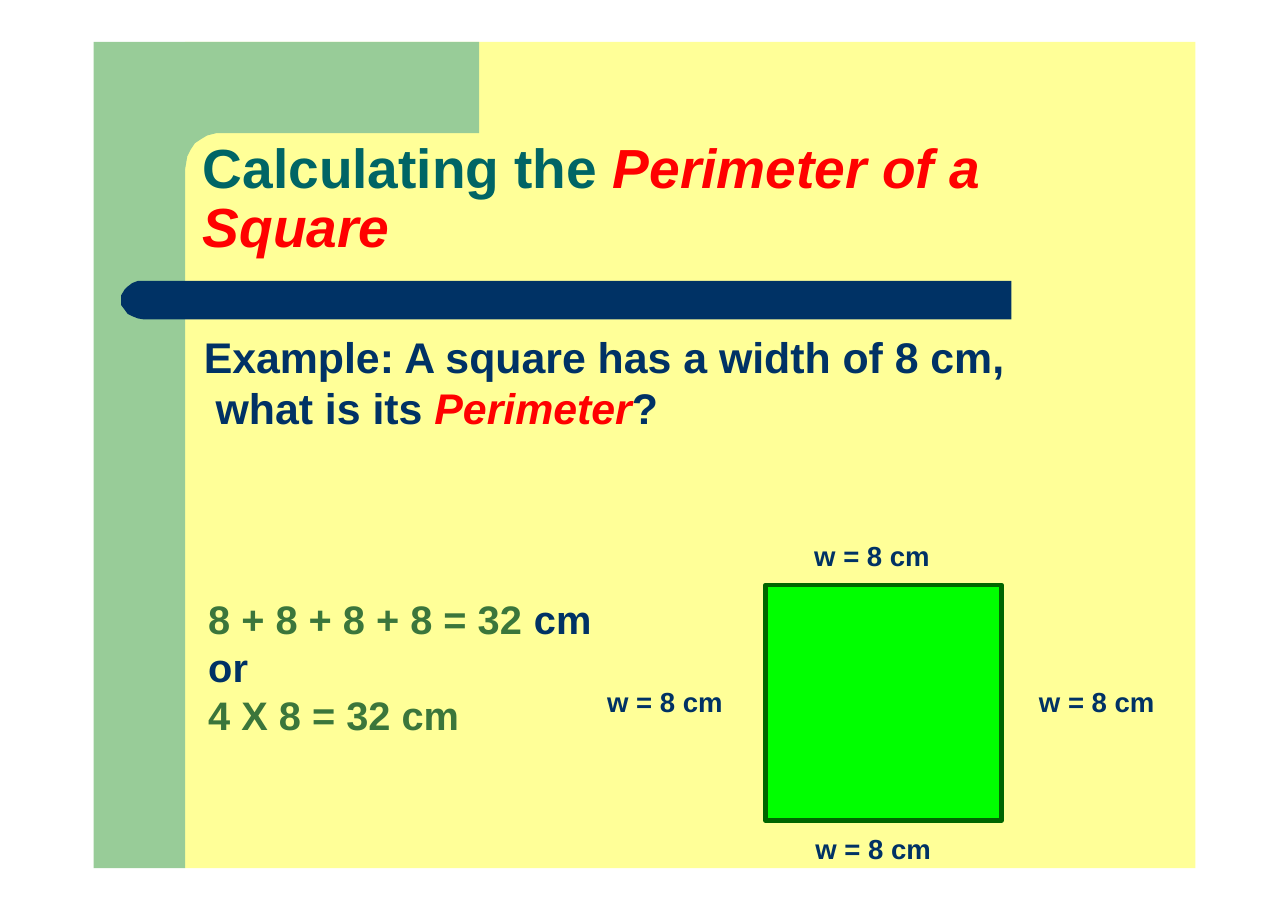
from pptx import Presentation
from pptx.dml.color import RGBColor
from pptx.enum import shapes, text
from pptx.util import Inches, Pt

COLORS = {
    "cream": "FFFF98", "sage": "98CC98", "navy": "003265", "teal": "006565",
    "red": "FF0000", "lime": "00FF00", "edge": "006500", "moss": "3B763B",
}
FONT = "Arial"
BREAK = None

TITLE = [[("Calculating the ", "teal", False), ("Perimeter of a Square", "red", True)]]
EXAMPLE = [[
    ("Example: A square has a width of 8 cm,", "navy", False),
    BREAK,
    (" what is its ", "navy", False),
    ("Perimeter", "red", True),
    ("?", "navy", False),
]]
ANSWER = [
    [("8 + 8 + 8 + 8 = 32 ", "moss", False), ("cm", "navy", False)],
    [("or", "navy", False)],
    [("4 X 8 = 32 cm", "moss", False)],
]
SIDE = [[("w = 8 cm", "navy", False)]]

TEXTS = [
    (TITLE, (1.84, 1.19, 8.02, 1.17), 36, 0.08, 5.8, 38.9),
    (EXAMPLE, (1.85, 2.99, 7.5, 0.96), 28, 0.01, 0.8, None),
    (ANSWER, (1.89, 5.39, 3.7, 1.33), 26, 0.01, 1, None),
]
SIDE_SPOTS = [(7.39, 4.88), (7.4, 7.54), (9.43, 6.21), (5.51, 6.21)]

PANEL = (1.68, 0.38, 9.17, 7.5)
SQUARE = (6.95, 5.31, 2.14, 2.14)
BAND = [
    (4.35, 0.38), (0.85, 0.38), (0.85, 7.88), (1.68, 7.88), (1.68, 1.54),
    (1.69, 1.48), (1.7, 1.42), (1.73, 1.36), (1.77, 1.3), (1.83, 1.26),
    (1.88, 1.23), (1.96, 1.21), (4.35, 1.21),
]
BAR_RIGHT, BAR_TOP, BAR_BOTTOM = 9.18, 2.55, 2.9
BAR_CAP = [
    (1.31, 2.55), (1.25, 2.55), (1.2, 2.57), (1.16, 2.6), (1.13, 2.63),
    (1.1, 2.68), (1.1, 2.77), (1.13, 2.81), (1.16, 2.85), (1.2, 2.87),
    (1.25, 2.89), (1.31, 2.9),
]
BAR = [(BAR_RIGHT, BAR_TOP), *BAR_CAP, (BAR_RIGHT, BAR_BOTTOM)]


def rgb(name):
    return RGBColor.from_string(COLORS[name])


def paint(sp, fill, edge=None):
    sp.shadow.inherit = False
    sp.fill.solid()
    sp.fill.fore_color.rgb = rgb(fill)
    if edge:
        sp.line.color.rgb = rgb(edge)
        sp.line.width = Pt(3)
    else:
        sp.line.fill.background()


def add_rectangle(s, box, fill, edge=None):
    sp = s.shapes.add_shape(shapes.MSO_SHAPE.RECTANGLE, *map(Inches, box))
    paint(sp, fill, edge)


def add_outline(s, points, fill):
    start, *rest = [(Inches(x), Inches(y)) for x, y in points]
    builder = s.shapes.build_freeform(*start)
    builder.add_line_segments(rest, close=True)
    paint(builder.convert_to_shape(), fill)


def add_text(s, paragraphs, box, size, inset, before, spacing=None):
    tf = s.shapes.add_textbox(*map(Inches, box)).text_frame
    tf.word_wrap = True
    tf.vertical_anchor = text.MSO_ANCHOR.TOP
    tf.margin_left = tf.margin_right = tf.margin_bottom = 0
    tf.margin_top = Inches(inset)
    for i, runs in enumerate(paragraphs):
        p = tf.add_paragraph() if i else tf.paragraphs[0]
        p.font.name, p.font.size, p.font.bold = FONT, Pt(size), True
        p.space_before = Pt(0 if i else before)
        if spacing:
            p.line_spacing = Pt(spacing)
        for run in runs:
            if run is BREAK:
                p.add_line_break()
                continue
            words, color, italic = run
            r = p.add_run()
            r.text = words
            r.font.color.rgb = rgb(color)
            r.font.italic = italic


def main():
    prs = Presentation()
    prs.slide_width, prs.slide_height = Inches(11.69), Inches(8.26)
    s = prs.slides.add_slide(prs.slide_layouts[6])
    add_rectangle(s, PANEL, "cream")
    add_outline(s, BAND, "sage")
    add_outline(s, BAR, "navy")
    add_rectangle(s, SQUARE, "lime", "edge")
    for item in TEXTS:
        add_text(s, *item)
    for left, top in SIDE_SPOTS:
        add_text(s, SIDE, (left, top, 1.15, 0.33), 18, 0.01, 1)
    prs.save("out.pptx")


if __name__ == "__main__":
    main()
